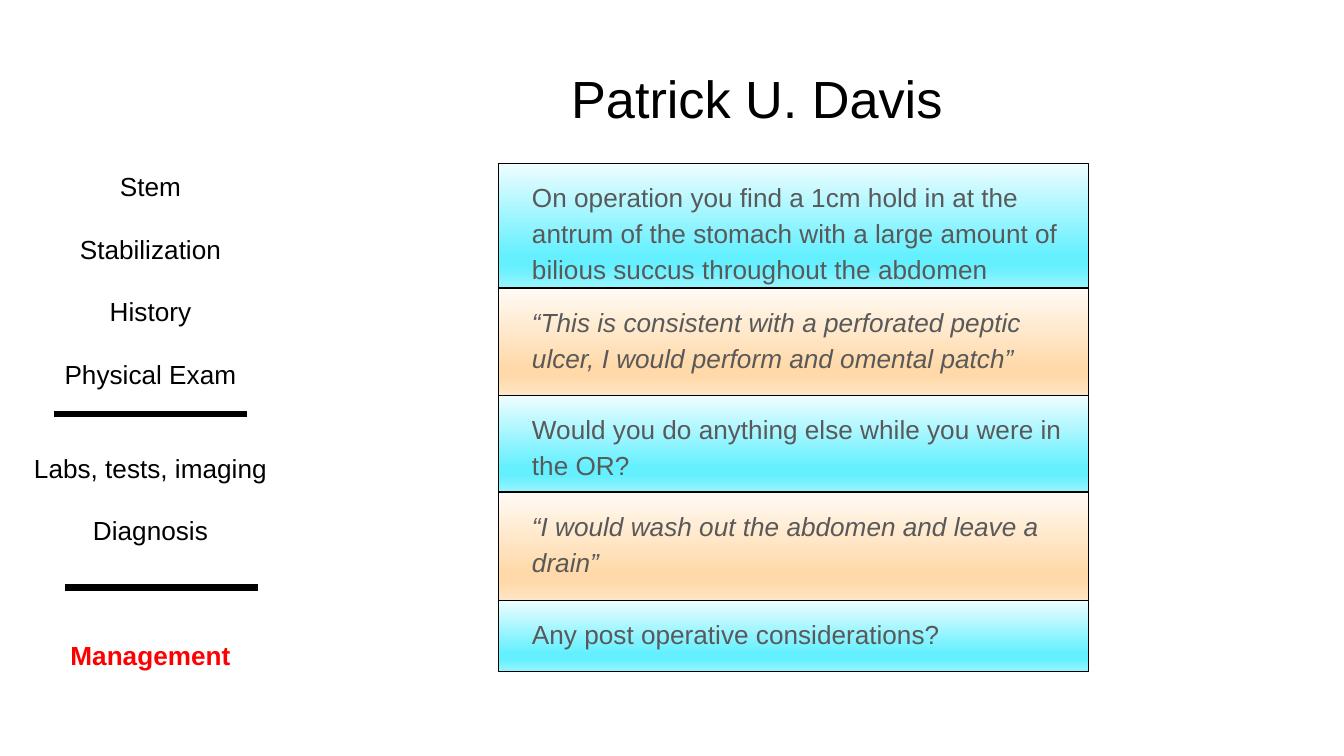
from copy import deepcopy
from dataclasses import dataclass

from pptx import Presentation
from pptx import util as u
from pptx.dml.color import RGBColor
from pptx.enum import shapes, text
from pptx.oxml.ns import qn

CELL = 0.1  # side of a grid cell in inches
SLIDE_COLUMNS, SLIDE_ROWS = 100, 56.25  # 16:9


@dataclass(frozen=True)
class Theme:
    font: str = "Arial"
    ink: str = "000000"
    body: str = "595959"
    accent: str = "FF0000"
    question: tuple = ("EEFDFF", "65F0FF", "65F0FF", "98F5FF")
    answer: tuple = ("FFFBF5", "FFD9A9", "FFD9A9", "FFE6C6")
    stops: tuple = (0, 0.74, 0.83, 1)
    title_size: int = 28
    text_size: int = 14
    outline: float = 0.75
    divider: float = 3.5


THEME = Theme()

# Step, and the number of blank line heights above it
STEPS = [("Stem", 0), ("Stabilization", 1), ("History", 1), ("Physical Exam", 1),
         ("Labs, tests, imaging", 2), ("Diagnosis", 1), ("Management", 3)]
CURRENT_STEP = "Management"
STEP_GAP = 16.7  # points
DIVIDERS = [(4, 30.8), (4.8, 43.7)]  # left column, row
DIVIDER_COLUMNS = 14.4

# Questions and answers take turns; each has a height in rows
DIALOGUE = [
    ("On operation you find a 1cm hold in at the antrum of the stomach "
     "with a large amount of bilious succus throughout the abdomen", 9.25),
    ("“This is consistent with a perforated peptic ulcer, "
     "I would perform and omental patch”", 8),
    ("Would you do anything else while you were in the OR?", 7.2),
    ("“I would wash out the abdomen and leave a drain”", 8.05),
    ("Any post operative considerations?", 5.3),
]
DIALOGUE_LEFT, DIALOGUE_TOP, DIALOGUE_COLUMNS = 37.1, 12.17, 43.9


def grid(*cells):
    """Turn counts of grid cells into lengths."""
    return [u.Inches(cell * CELL) for cell in cells]


def write(paragraph, words, size=THEME.text_size, color=THEME.ink, bold=False,
          italic=False, align=text.PP_ALIGN.LEFT, before=0, spacing=1.0, indent=0):
    """Put formatted words into a paragraph."""
    run = paragraph.add_run()
    run.text = words
    run.font.name, run.font.size = THEME.font, u.Pt(size)
    run.font.bold, run.font.italic = bold, italic
    run.font.color.rgb = RGBColor.from_string(color)
    paragraph.alignment = align
    paragraph.space_before = u.Pt(before)
    paragraph.line_spacing = spacing
    if indent:
        properties = paragraph._p.get_or_add_pPr()
        properties.set("marL", str(u.Inches(indent)))
        properties.set("indent", "0")


def set_frame(frame, inset=0.1):
    """Wrapped text from the top, with equal insets."""
    frame.word_wrap = True
    frame.auto_size = text.MSO_AUTO_SIZE.NONE
    frame.vertical_anchor = text.MSO_ANCHOR.TOP
    frame.margin_left = frame.margin_right = u.Inches(inset)
    frame.margin_top = frame.margin_bottom = u.Inches(inset)


def fill_gradient(shape, colors):
    """Vertical gradient with one stop for each color."""
    shape.fill.gradient()
    shape.fill.gradient_angle = 270
    stop_list = shape._element.spPr.find(qn("a:gradFill")).find(qn("a:gsLst"))
    while len(stop_list) < len(colors):
        stop_list.append(deepcopy(stop_list[0]))
    for stop, position, color in zip(shape.fill.gradient_stops, THEME.stops, colors):
        stop.position = position
        stop.color.rgb = RGBColor.from_string(color)


def add_title(slide, words):
    title = slide.shapes.title
    title.left, title.top, title.width, title.height = grid(41.5, 3.9, 63.5, 6.3)
    set_frame(title.text_frame)
    write(title.text_frame.paragraphs[0], words, size=THEME.title_size)


def add_divider(group, column, row):
    line = group.shapes.add_connector(
        shapes.MSO_CONNECTOR.STRAIGHT, *grid(column, row, column + DIVIDER_COLUMNS, row))
    line.line.color.rgb = RGBColor.from_string(THEME.ink)
    line.line.width = u.Pt(THEME.divider)
    properties = line._element.spPr
    properties.append(properties.makeelement(qn("a:effectLst"), {}))


def add_steps(slide):
    """Outline of the case, with the current step marked."""
    group = slide.shapes.add_group_shape()
    frame = group.shapes.add_textbox(*grid(1.5, 12.2, 19.4, 38.7)).text_frame
    frame.word_wrap = False
    for index, (step, gaps) in enumerate(STEPS):
        paragraph = frame.add_paragraph() if index else frame.paragraphs[0]
        current = step == CURRENT_STEP
        write(paragraph, step, bold=current, align=text.PP_ALIGN.CENTER,
              color=THEME.accent if current else THEME.ink, before=gaps * STEP_GAP)
    for column, row in DIVIDERS:
        add_divider(group, column, row)


def add_remark(slide, words, row, rows, is_answer):
    box = slide.shapes.add_shape(
        shapes.MSO_SHAPE.RECTANGLE, *grid(DIALOGUE_LEFT, row, DIALOGUE_COLUMNS, rows))
    box.shadow.inherit = False
    fill_gradient(box, THEME.answer if is_answer else THEME.question)
    box.line.color.rgb = RGBColor.from_string(THEME.ink)
    box.line.width = u.Pt(THEME.outline)
    set_frame(box.text_frame)
    write(box.text_frame.paragraphs[0], words, color=THEME.body, italic=is_answer,
          spacing=1.15, indent=0.15)


def main():
    presentation = Presentation()
    presentation.slide_width, presentation.slide_height = grid(SLIDE_COLUMNS, SLIDE_ROWS)
    slide = presentation.slides.add_slide(presentation.slide_layouts[5])

    # Left column, then title
    add_steps(slide)
    add_title(slide, "Patrick U. Davis")

    # Stacked questions and answers
    row = DIALOGUE_TOP
    for index, (words, rows) in enumerate(DIALOGUE):
        add_remark(slide, words, row, rows, is_answer=index % 2 == 1)
        row += rows

    presentation.save("out.pptx")


if __name__ == "__main__":
    main()
